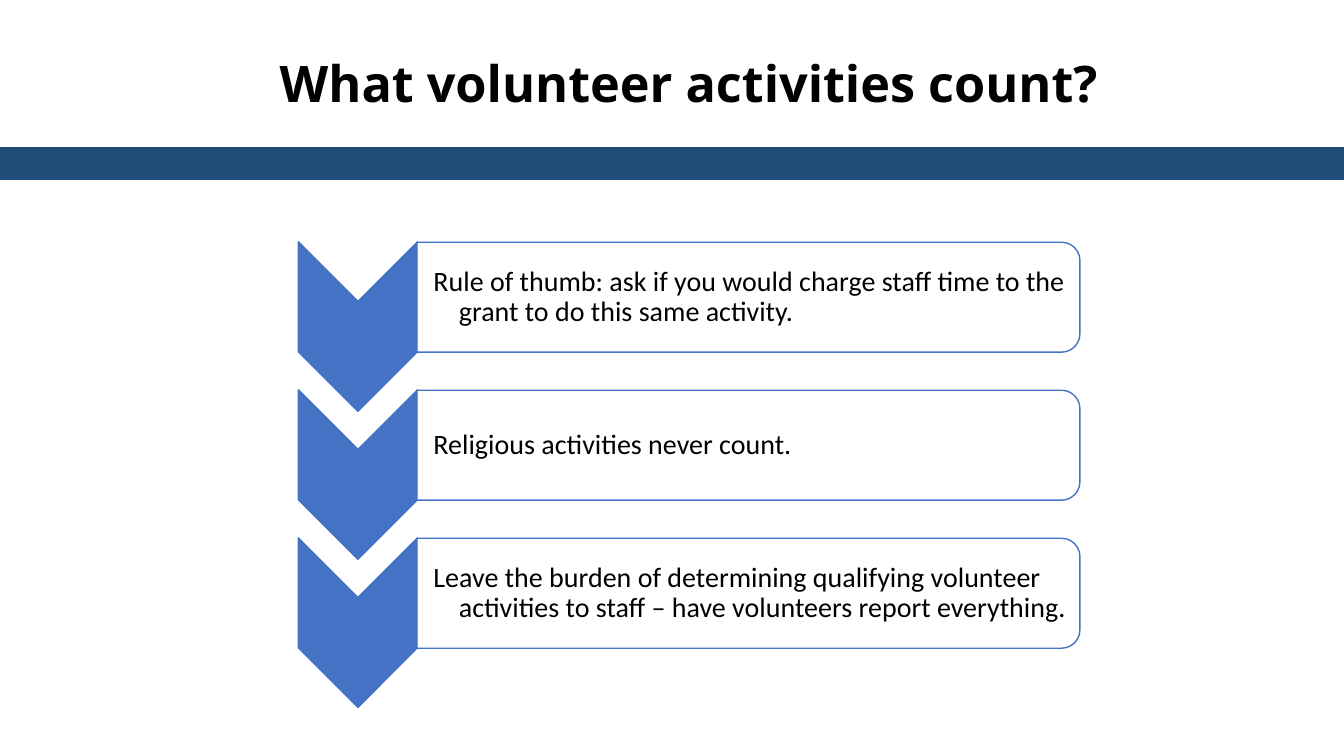
from lxml import etree
from pptx import Presentation
from pptx.dml.color import RGBColor
from pptx.enum import shapes, text
from pptx.oxml.ns import qn
from pptx.util import Cm, Pt

TITLE = "What volunteer activities count?"
RULES = [
    "Rule of thumb: ask if you would charge staff time to the grant to do this same activity.",
    "Religious activities never count.",
    "Leave the burden of determining qualifying volunteer activities to staff – "
    "have volunteers report everything.",
]
THEME = {
    "band": "1F4E79", "blue": "4472C4", "panel": "FFFFFF", "ink": "000000",
    "head": {"name": "Open Sans", "size": Pt(36), "bold": True},
    "body": {"name": "Calibri", "size": Pt(20), "bold": False},
}

# All lengths in cm; rows repeat downwards by STEP
WIDE, HIGH = 33.87, 19.05
STEP = 3.73
ARROW = {"mid": (9.02, 8.23), "size": (4.27, 3.0)}
PANEL = {"mid": (18.86, 7.49), "size": (2.77, 16.71)}
LABEL = {"mid": (18.81, 7.5), "size": (16.59, 2.51)}
INSET = {"margin_left": 0.41, "margin_top": 0.03,
         "margin_right": 0.03, "margin_bottom": 0.03}
HANG = 0.64

KIND = shapes.MSO_SHAPE
deck = Presentation()
deck.slide_width, deck.slide_height = Cm(WIDE), Cm(HIGH)
slide = deck.slides.add_slide(deck.slide_layouts[6])


def place(part, row):
    """Return left, top, width and height of a part in the given row."""
    (x, y), (w, h) = part["mid"], part["size"]
    return x - w / 2, y + row * STEP - h / 2, w, h


def draw(kind, box, fill, line, turn=0):
    shape = slide.shapes.add_shape(kind, *map(Cm, box))
    shape.shadow.inherit = False
    shape.rotation = turn
    shape.fill.solid()
    shape.fill.fore_color.rgb = RGBColor.from_string(fill)
    shape.line.color.rgb = RGBColor.from_string(line)
    shape.line.width = Pt(1)
    return shape


def fade(shape, share):
    """Set the opacity of a solid fill, in percent."""
    tone = shape.fill._xPr.find(qn("a:solidFill"))[0]
    etree.SubElement(tone, qn("a:alpha"), val=str(share * 1000))


def write(words, box, font, form):
    frame = slide.shapes.add_textbox(*map(Cm, box)).text_frame
    frame.word_wrap = True
    for key, value in form.items():
        setattr(frame, key, value)
    para = frame.paragraphs[0]
    run = para.add_run()
    run.text = words
    for key, value in font.items():
        setattr(run.font, key, value)
    run.font.color.rgb = RGBColor.from_string(THEME["ink"])
    return para


head = write(TITLE, (1.83, 1.19, 31.06, 3.68), THEME["head"], {})
head.alignment = text.PP_ALIGN.CENTER
draw(KIND.RECTANGLE, (0, 3.73, WIDE, 0.79), THEME["band"], THEME["band"])

form = {key: Cm(value) for key, value in INSET.items()}
form["vertical_anchor"] = text.MSO_ANCHOR.MIDDLE
for row, rule in enumerate(RULES):
    draw(KIND.CHEVRON, place(ARROW, row), THEME["blue"], THEME["blue"], 90)
    panel = draw(KIND.ROUND_2_SAME_RECTANGLE, place(PANEL, row),
                 THEME["panel"], THEME["blue"], 90)
    fade(panel, 90)
    para = write(rule, place(LABEL, row), THEME["body"], form)
    para.level = 1
    para.line_spacing = 0.9
    para.space_after = Pt(3)
    props = para._p.get_or_add_pPr()
    props.set("marL", str(Cm(HANG)))
    props.set("indent", str(-Cm(HANG)))

deck.save("out.pptx")
